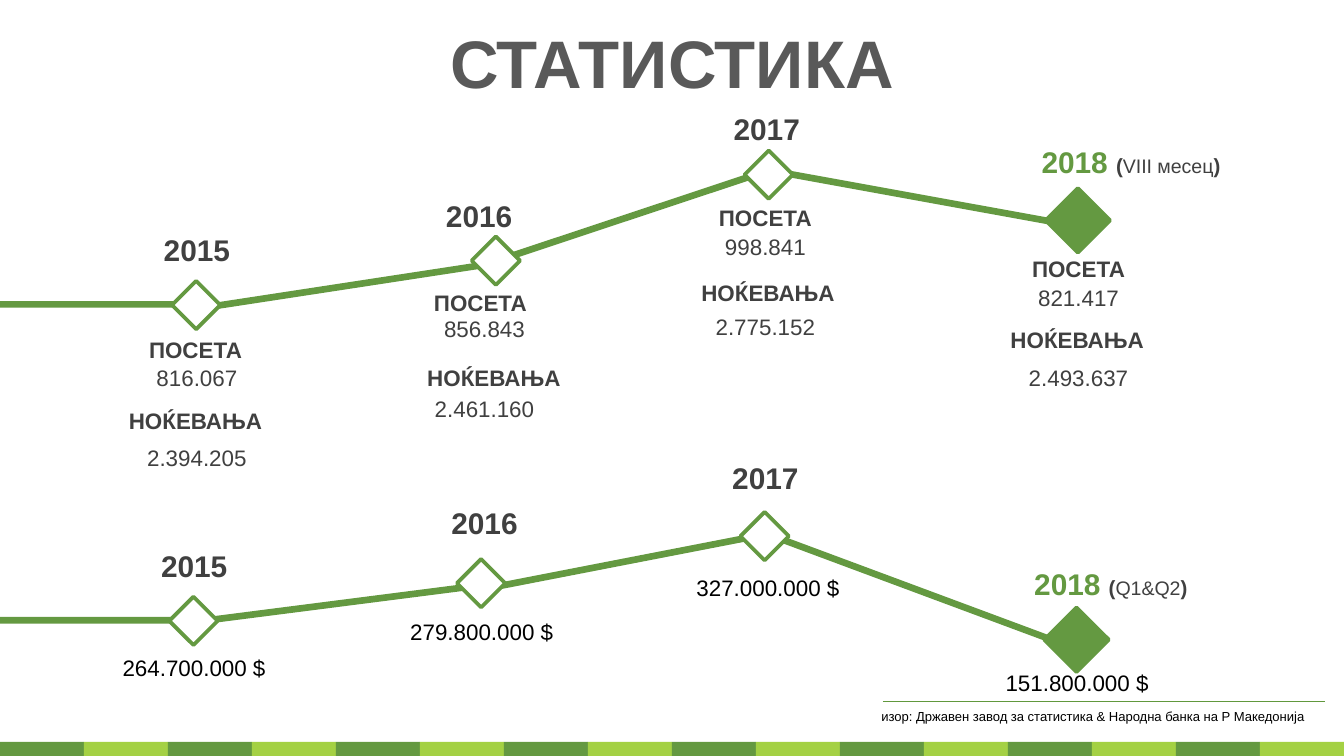
import pptx
import pptx.util
import pptx.dml.color
import pptx.enum.shapes
import pptx.enum.text
import pptx.oxml.ns
from dataclasses import dataclass
from pptx.util import Inches
from lxml import etree

SHAPES = pptx.enum.shapes.MSO_SHAPE
ALIGN = pptx.enum.text.PP_ALIGN
ANCHOR = pptx.enum.text.MSO_ANCHOR


@dataclass(frozen=True)
class Theme:
    font: str = "Arial"
    green: str = "649941"
    lime: str = "A4D144"
    rule: str = "61983D"
    white: str = "FFFFFF"
    black: str = "000000"
    dark: str = "404040"
    heading: str = "595959"
    title_size: float = 36
    year_size: float = 16
    text_size: float = 12
    bracket_size: float = 11
    period_size: float = 10.5
    source_size: float = 7


class Builder:
    def __init__(self, prs, theme):
        self.theme = theme
        self.s = prs.slides.add_slide(prs.slide_layouts[5])

    def rgb(self, color):
        return pptx.dml.color.RGBColor.from_string(color)

    def style(self, font, size, color, bold=False):
        font.name = self.theme.font
        font.size = pptx.util.Pt(size)
        font.bold = bold
        font.color.rgb = self.rgb(color)

    def title(self, text, x, y, w, h):
        sp = self.s.shapes.title
        sp.left, sp.top, sp.width, sp.height = map(Inches, (x, y, w, h))
        tf = sp.text_frame
        tf.vertical_anchor = ANCHOR.MIDDLE
        p = tf.paragraphs[0]
        p.text = text
        p.alignment = ALIGN.CENTER
        self.style(p.font, self.theme.title_size, self.theme.heading, True)

    def shape(self, kind, x, y, w, h, fill, line=None, angle=0):
        sp = self.s.shapes.add_shape(kind, *map(Inches, (x, y, w, h)))
        sp.shadow.inherit = False
        sp.rotation = angle
        sp.fill.solid()
        sp.fill.fore_color.rgb = self.rgb(fill)
        if line:
            sp.line.color.rgb = self.rgb(line)
            sp.line.width = pptx.util.Pt(2)
        else:
            sp.line.fill.background()

    def bar(self, x, y, length, angle=0):
        self.shape(SHAPES.RECTANGLE, x, y, length, 0.05, self.theme.green, angle=angle)

    def diamond(self, x, y, last):
        size = 0.48 if last else 0.36
        fill = self.theme.green if last else self.theme.white
        self.shape(SHAPES.DIAMOND, x, y, size, size, fill, self.theme.green)

    def text(self, lines, x, y, w, h, size, color, bold=False, gap=0,
             align=ALIGN.CENTER, anchor=ANCHOR.MIDDLE, wrap=True):
        tf = self.s.shapes.add_textbox(*map(Inches, (x, y, w, h))).text_frame
        tf.word_wrap = wrap
        tf.vertical_anchor = anchor
        for i, line in enumerate(lines):
            p = tf.add_paragraph() if i else tf.paragraphs[0]
            p.text = line
            p.alignment = align
            if i:
                p.space_before = pptx.util.Pt(gap)
            self.style(p.font, size, color, bold)
        return tf

    def year(self, year, x, y, w, period=None):
        t = self.theme
        color = t.green if period else t.dark
        tf = self.text([year + " " if period else year], x, y, w, 0.37,
                       t.year_size, color, True)
        if period:
            p = tf.paragraphs[0]
            for part, size, bold in (("(", t.bracket_size, True),
                                     (period, t.period_size, False),
                                     (")", t.bracket_size, True)):
                r = p.add_run()
                r.text = part
                self.style(r.font, size, t.dark, bold)

    def label(self, text, x, y):
        self.text([text], x, y, 1.71, 0.3, self.theme.text_size, self.theme.dark, True)

    def values(self, lines, x, y):
        self.text(lines, x, y, 1.69, 0.91, self.theme.text_size, self.theme.dark, gap=28.5)

    def amount(self, text, x, y):
        self.text([text], x, y, 1.27, 0.3, self.theme.text_size, self.theme.black,
                  anchor=ANCHOR.TOP, wrap=False)

    def source(self, text, x, y):
        self.text([text], x, y, 3.41, 0.22, self.theme.source_size, self.theme.black,
                  align=ALIGN.LEFT, anchor=ANCHOR.TOP, wrap=False)

    def rule(self, x1, x2, y):
        line = self.s.shapes.add_connector(
            pptx.enum.shapes.MSO_CONNECTOR.STRAIGHT, *map(Inches, (x1, y, x2, y)))
        line.line.color.rgb = self.rgb(self.theme.rule)
        line.line.width = pptx.util.Pt(1)
        etree.SubElement(line._element.spPr, pptx.oxml.ns.qn("a:effectLst"))

    def stripes(self, count, y, h):
        step = 10 / count
        for i in range(count):
            fill = self.theme.lime if i % 2 else self.theme.green
            self.shape(SHAPES.RECTANGLE, i * step, y, step, h, fill)


VISIT_BARS = [(0, 2.24, 1.46, 0), (1.34, 2.12, 2.25, 351.3),
              (3.55, 1.59, 2.25, 341.6), (5.67, 1.46, 2.5, 10.3)]
REVENUE_BARS = [(-0.02, 4.59, 1.46, 0), (1.44, 4.46, 2.25, 352.7),
                (3.67, 4.15, 2, 349), (5.73, 4.36, 2.17, 20.4)]

VISITS = [
    ("2015", None, (1.1, 1.67, 0.73), (1.28, 2.09), (0.6, 2.45), (0.6, 2.98),
     ("816.067", "2.394.205"), (0.62, 2.65)),
    ("2016", None, (3.2, 1.42, 0.73), (3.51, 1.76), (2.72, 2.1), (2.82, 2.66),
     ("856.843", "2.461.160"), (2.76, 2.29)),
    ("2017", None, (5.34, 0.77, 0.73), (5.54, 1.12), (4.84, 1.47), (4.86, 2.03),
     ("998.841", "2.775.152"), (4.85, 1.68)),
    ("2018", "VIII месец", (7.42, 1.02, 1.99), (7.78, 1.4), (7.17, 1.85), (7.16, 2.38),
     ("821.417", "2.493.637"), (7.18, 2.06)),
]
REVENUE = [
    ("2015", None, (1.08, 4.02, 0.73), (1.26, 4.44), "264.700.000 $", (0.81, 4.82)),
    ("2016", None, (3.24, 3.7, 0.73), (3.4, 4.16), "279.800.000 $", (2.95, 4.55)),
    ("2017", None, (5.33, 3.37, 0.73), (5.51, 3.81), "327.000.000 $", (5.08, 4.22)),
    ("2018", "Q1&Q2", (7.59, 4.16, 1.35), (7.77, 4.52), "151.800.000 $", (7.38, 4.93)),
]


def main():
    prs = pptx.Presentation()
    prs.slide_width = Inches(10)
    prs.slide_height = prs.slide_width * 9 // 16
    b = Builder(prs, Theme())
    b.stripes(16, 5.52, 0.11)
    b.title("СТАТИСТИКА", 0, 0.14, 10, 0.63)

    for bar in VISIT_BARS + REVENUE_BARS:
        b.bar(*bar)
    for year, period, year_at, mark_at, visit_at, nights_at, numbers, numbers_at in VISITS:
        b.diamond(*mark_at, last=bool(period))
        b.year(year, *year_at, period)
        b.values(numbers, *numbers_at)
        b.label("ПОСЕТА", *visit_at)
        b.label("НОЌЕВАЊА", *nights_at)
    for year, period, year_at, mark_at, amount, amount_at in REVENUE:
        b.diamond(*mark_at, last=bool(period))
        b.year(year, *year_at, period)
        b.amount(amount, *amount_at)

    b.source("изор: Државен завод за статистика & Народна банка на Р Македонија", 6.46, 5.22)
    b.rule(6.57, 9.86, 5.22)
    prs.save("out.pptx")


if __name__ == "__main__":
    main()
